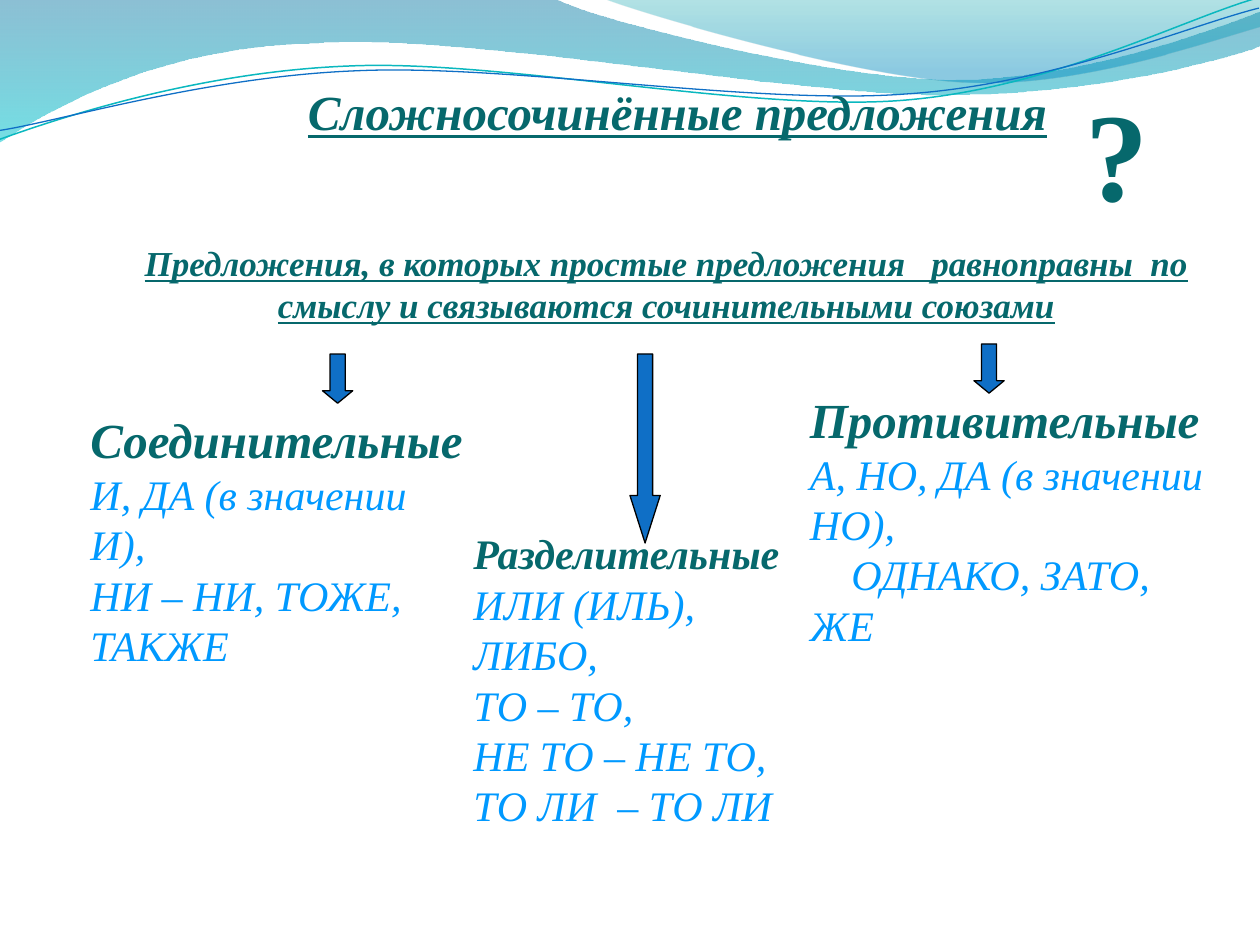
"""Build a slide on compound sentences and their three groups of conjunctions."""
from lxml.etree import SubElement
from pptx import Presentation
from pptx.dml.color import RGBColor
from pptx.enum.shapes import MSO_SHAPE
from pptx.enum.text import PP_ALIGN
from pptx.oxml.ns import qn
from pptx.util import Pt

PX = 9144
TEAL, SKY, BLUE = "06686C", "0099FF", "0F6FC6"


def rgb(value):
    return RGBColor.from_string(value)


def add_outline(shapes, start, segments, close):
    builder = shapes.build_freeform(*start, scale=PX)
    for segment in segments:
        builder.add_line_segments(list(zip(segment[::2], segment[1::2])), close=False)
    if close:
        builder.add_line_segments([], close=True)
    outline = builder.convert_to_shape()
    outline.shadow.inherit = False
    steps = iter(list(outline._element.iter(qn("a:lnTo"))))
    for segment in segments:
        step = next(steps)
        if len(segment) == 6:
            step.tag = qn("a:cubicBezTo")
            step.append(next(steps)[0])
            step.append(next(steps)[0])
    for step in list(outline._element.iter(qn("a:lnTo"))):
        if len(step) == 0:
            step.getparent().remove(step)
    return outline


prs = Presentation()
prs.slide_width, prs.slide_height = 1000 * PX, 750 * PX
slide = prs.slides.add_slide(prs.slide_layouts[6])
shapes = slide.shapes

bands = [
    ((0, 0), [(440, -1), (476, 17, 664, 63, 758, 63), (853, 63, 958, 26, 1000, 9), (1001, 36),
              (983, 44, 870, 76, 746, 75), (622, 75, 382, 28, 257, 34),
              (129, 36, 46, 83, -1, 113), (0, 0)],
     [(0, "0074A1", 45), (1, "00C6CF", 55)]),
    ((479, -1), [(509, 11, 682, 62, 769, 65), (856, 69, 961, 32, 1000, 21), (1000, 0), (479, -1)],
     [(0, "00A1A9", 30), (0.8, "008BBF", 45)]),
]
for start, segments, stops in bands:
    band = add_outline(shapes, start, segments, True)
    band.line.fill.background()
    band.fill.gradient()
    band.fill.gradient_angle = 270
    for stop, (position, color, _) in zip(band.fill.gradient_stops, stops):
        stop.position = position
        stop.color.rgb = rgb(color)
    for color_element, (_, _, opacity) in zip(band._element.spPr.iter(qn("a:srgbClr")), stops):
        SubElement(color_element, qn("a:alpha")).set("val", str(opacity * 1000))

waves = [
    ((-2, 87), [(47, 72, 158, 41, 277, 42), (396, 42, 591, 93, 712, 90),
                (832, 87, 940, 36, 1000, 22)], "0AB8BF", 0.85),
    ((-2, 80), [(46, 75, 164, 45, 283, 46), (403, 46, 596, 88, 716, 85),
                (835, 83, 942, 42, 1001, 30)], BLUE, 0.75),
]
for start, segments, color, width in waves:
    wave = add_outline(shapes, start, segments, False)
    wave.rotation = 357.3
    wave.fill.background()
    wave.line.color.rgb = rgb(color)
    wave.line.width = Pt(width)

definition = ("Предложения, в которых простые предложения   равноправны  по смыслу "
              "и связываются сочинительными союзами")
texts = [
    ((150, 60, 717, 118), 28, "Сложносочинённые предложения", []),
    ((86, 187, 886, 77), 20, definition, []),
    ((366, 414, 274, 300), 24, "Разделительные",
     ["ИЛИ (ИЛЬ), ЛИБО,", "ТО – ТО,\nНЕ ТО – НЕ ТО,\nТО ЛИ  – ТО ЛИ"]),
    ((62, 320, 320, 219), 28, "Соединительные",
     ["И, ДА (в значении И),", "НИ – НИ, ТОЖЕ,", "ТАКЖЕ"]),
    ((633, 304, 344, 219), 28, "Противительные",
     ["А, НО, ДА (в значении НО),", "ОДНАКО, ЗАТО, ЖЕ"]),
    ((852, 55, 123, 131), 72, "?", []),
]
for box, size, heading, conjunctions in texts:
    frame = shapes.add_textbox(*(side * PX for side in box)).text_frame
    frame.word_wrap = True
    for index, words in enumerate([heading, *conjunctions]):
        paragraph = frame.add_paragraph() if index else frame.paragraphs[0]
        paragraph.text = words
        font = paragraph.font
        font.name = "Times New Roman"
        font.size = Pt(24 if index else size)
        font.bold = index == 0
        font.italic = heading != "?"
        font.color.rgb = rgb(SKY if index else TEAL)
        if words.startswith("ОДНАКО"):
            paragraph._p.get_or_add_pPr().set("indent", str(33 * PX))
        if not conjunctions and heading != "?":
            paragraph.alignment = PP_ALIGN.CENTER
            font.underline = True
    if heading.startswith("Сложно"):
        frame.margin_left = 68 * PX

for left, top, height, head in [(256, 281, 39, 0.41), (500, 281, 150, 1.57), (773, 273, 39, 0.41)]:
    arrow = shapes.add_shape(MSO_SHAPE.DOWN_ARROW, left * PX, top * PX, 24 * PX, height * PX)
    arrow.adjustments[0], arrow.adjustments[1] = 0.5, head
    arrow.shadow.inherit = False
    arrow.fill.solid()
    arrow.fill.fore_color.rgb = rgb(BLUE)
    arrow.line.color.rgb = rgb("000000")
    arrow.line.width = Pt(0.75)

prs.save("out.pptx")
